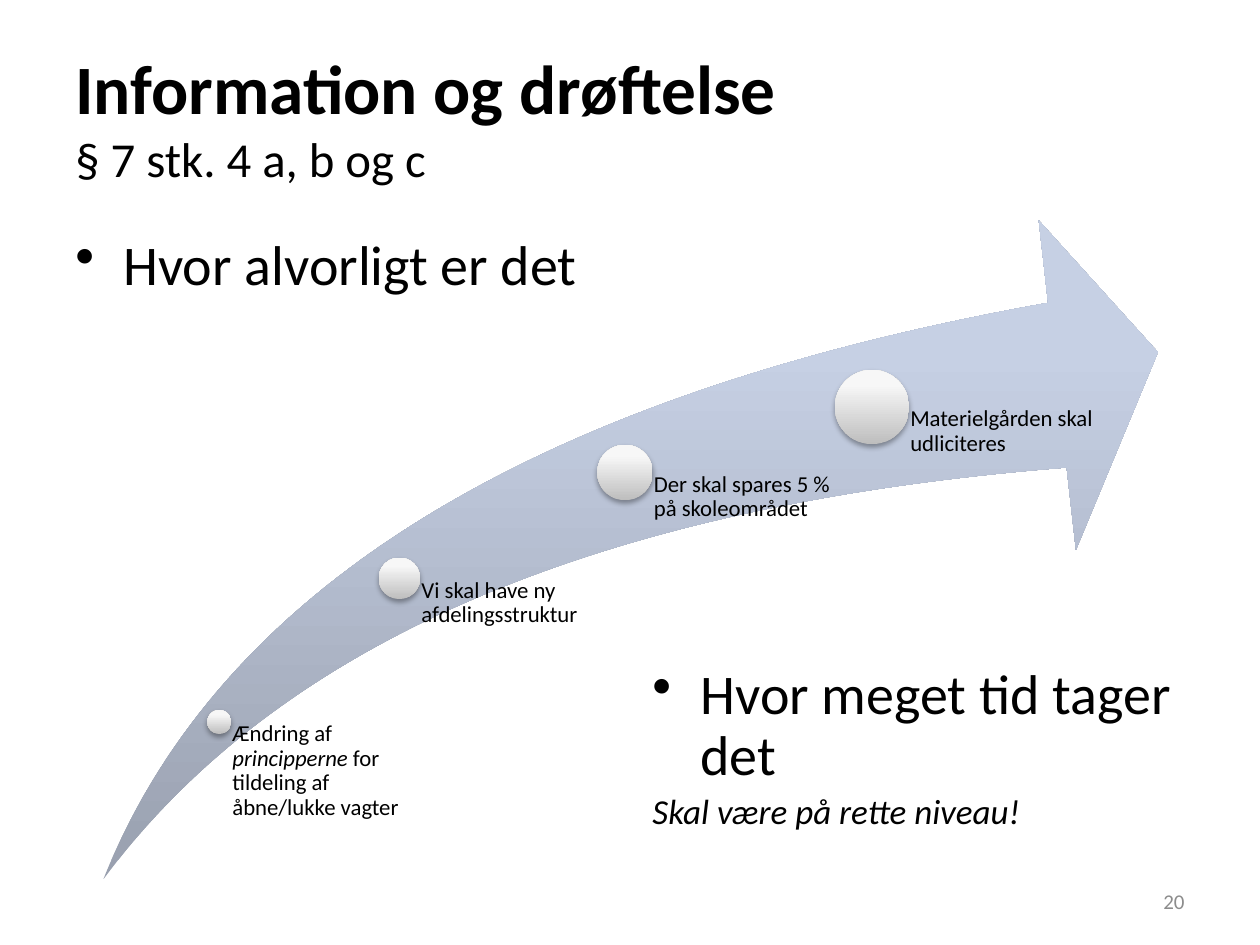
from lxml import etree
from pptx import Presentation
from pptx.dml.color import RGBColor
from pptx.enum.shapes import MSO_SHAPE
from pptx.enum.text import MSO_ANCHOR, PP_ALIGN
from pptx.oxml import parse_xml
from pptx.oxml.ns import nsdecls, qn
from pptx.util import Inches, Pt

SWOOSH, OVAL = MSO_SHAPE.SWOOSH_ARROW, MSO_SHAPE.OVAL
TOP, MIDDLE = MSO_ANCHOR.TOP, MSO_ANCHOR.MIDDLE
LEFT, RIGHT = PP_ALIGN.LEFT, PP_ALIGN.RIGHT

BLACK = RGBColor(0x00, 0x00, 0x00)
NUMBER_GRAY = RGBColor(0x8C, 0x8C, 0x8C)
ARROW_DARK, ARROW_LIGHT = RGBColor(0x99, 0xA0, 0xAF), RGBColor(0xC6, 0xD0, 0xE4)
BALL_DARK, BALL_LIGHT = RGBColor(0xBE, 0xBE, 0xBE), RGBColor(0xF7, 0xF7, 0xF7)

FONT = "Calibri"
BULLET_INDENT = Inches(0.38)
SHADOW = (
    f'<a:outerShdw {nsdecls("a")} blurRad="39370" dist="22860" dir="5400000" rotWithShape="0">'
    '<a:srgbClr val="000000"><a:alpha val="35000"/></a:srgbClr></a:outerShdw>'
)

# Centre x, centre y, diameter, label width, label runs as (text, italic)
STEPS = [
    (1.74, 5.73, 0.19, 1.43, [("Ændring af ", False), ("principperne", True),
                              (" for tildeling af åbne/lukke vagter", False)]),
    (3.17, 4.59, 0.33, 1.76, [("Vi skal have ny afdelingsstruktur", False)]),
    (4.96, 3.75, 0.44, 1.76, [("Der skal spares 5 % på skoleområdet", False)]),
    (6.92, 3.23, 0.59, 1.76, [("Materielgården skal udliciteres", False)]),
]


def add_text_frame(slide, left, top, width, height, anchor=TOP):
    box = slide.shapes.add_textbox(Inches(left), Inches(top), Inches(width), Inches(height))
    frame = box.text_frame
    frame.word_wrap = True
    frame.vertical_anchor = anchor
    return frame


def style(paragraph, size, color=BLACK, align=LEFT, spacing=None):
    paragraph.font.name = FONT
    paragraph.font.size = Pt(size)
    paragraph.font.color.rgb = color
    paragraph.alignment = align
    paragraph.line_spacing = spacing


def add_bullet(paragraph):
    properties = paragraph._p.get_or_add_pPr()
    properties.set("marL", str(BULLET_INDENT))
    properties.set("indent", str(-BULLET_INDENT))
    etree.SubElement(properties, qn("a:buChar"), char="•")


def add_gradient_shape(slide, kind, left, top, width, height, dark, light):
    shape = slide.shapes.add_shape(kind, Inches(left), Inches(top), Inches(width), Inches(height))
    shape.shadow.inherit = False
    shape.line.fill.background()
    shape.fill.gradient()
    shape.fill.gradient_angle = 90
    bottom_stop, top_stop = shape.fill.gradient_stops
    bottom_stop.color.rgb, bottom_stop.position = dark, 0
    top_stop.color.rgb, top_stop.position = light, 0.8
    return shape


def add_title(slide, left, top, width, height):
    paragraph = add_text_frame(slide, left, top, width, height, MIDDLE).paragraphs[0]
    style(paragraph, 39.6)
    heading = paragraph.add_run()
    heading.text = "Information og drøftelse"
    heading.font.bold = True
    paragraph.add_line_break()
    clause = paragraph.add_run()
    clause.text = "§ 7 stk. 4 a, b og c"
    clause.font.size = Pt(27.9)


def add_step(slide, x, y, diameter, label_width, runs, bottom):
    radius = diameter / 2
    ball = add_gradient_shape(slide, OVAL, x - radius, y - radius, diameter, diameter,
                              BALL_DARK, BALL_LIGHT)
    ball._element.spPr.find(qn("a:effectLst")).append(parse_xml(SHADOW))

    # The label starts at the centre of the ball and is inset past its edge
    label = add_text_frame(slide, x, y, label_width, bottom - y)
    label.margin_left = Inches(radius + 0.01)
    label.margin_top = label.margin_right = label.margin_bottom = 0
    paragraph = label.paragraphs[0]
    style(paragraph, 13, spacing=0.9)
    for text, italic in runs:
        run = paragraph.add_run()
        run.text = text
        if italic:
            run.font.italic = True


def add_arrow_diagram(slide, left, top, width, height):
    add_gradient_shape(slide, SWOOSH, left, top, width, height, ARROW_DARK, ARROW_LIGHT)
    for step in STEPS:
        add_step(slide, *step, bottom=top + height)


def add_question(slide, left, top, width, height, question, remark=None, spacing=None):
    frame = add_text_frame(slide, left, top, width, height)
    paragraph = frame.paragraphs[0]
    paragraph.text = question
    add_bullet(paragraph)
    style(paragraph, 32, spacing=spacing)
    if remark:
        paragraph = frame.add_paragraph()
        paragraph.text = remark
        style(paragraph, 20, spacing=spacing)
        paragraph.font.italic = True
        paragraph.space_before = Pt(4)


def add_slide_number(slide, left, top, width, height):
    paragraph = add_text_frame(slide, left, top, width, height, MIDDLE).paragraphs[0]
    paragraph.text = "20"
    style(paragraph, 12, NUMBER_GRAY, RIGHT)


def main():
    presentation = Presentation()
    presentation.slide_width, presentation.slide_height = Inches(10), Inches(7.5)
    slide = presentation.slides.add_slide(presentation.slide_layouts[6])

    add_arrow_diagram(slide, 0.82, 1.75, 8.37, 5.23)
    add_title(slide, 0.5, 0.3, 9, 1.25)
    add_question(slide, 0.5, 1.77, 4.42, 0.7, "Hvor alvorligt er det")
    add_question(slide, 5.08, 5.24, 4.42, 1.46, "Hvor meget tid tager det",
                 "Skal være på rette niveau!", 0.9)
    add_slide_number(slide, 7.17, 6.95, 2.33, 0.4)

    presentation.save("out.pptx")


if __name__ == "__main__":
    main()
